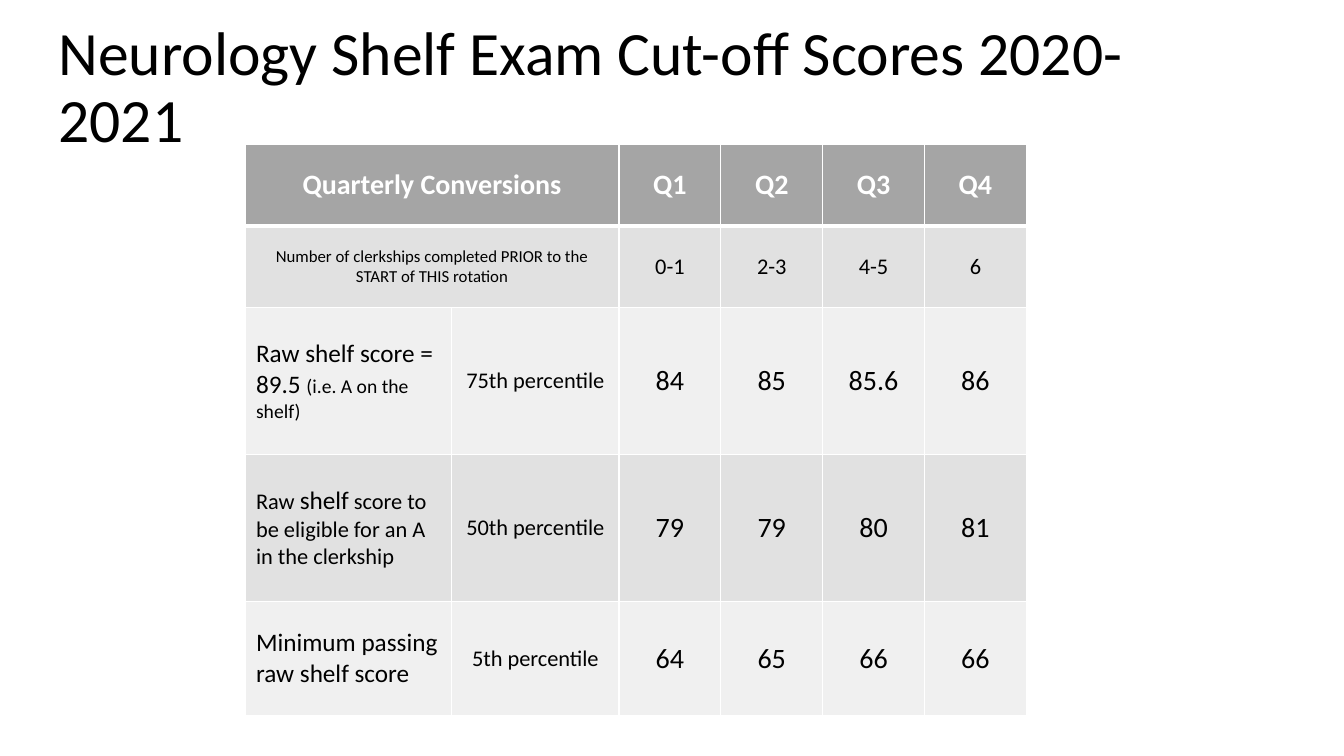
from dataclasses import dataclass

from lxml import etree
from pptx import Presentation
from pptx.dml.color import RGBColor
from pptx.enum.text import MSO_ANCHOR, MSO_AUTO_SIZE, PP_ALIGN
from pptx.oxml.ns import qn
from pptx.util import Inches, Pt

MIDDLE = MSO_ANCHOR.MIDDLE
LEFT, CENTER = PP_ALIGN.LEFT, PP_ALIGN.CENTER
NO_AUTOFIT = MSO_AUTO_SIZE.NONE


@dataclass(frozen=True)
class Theme:
    font: str = "Calibri"
    text: str = "000000"
    white: str = "FFFFFF"
    header: str = "A5A5A5"
    bands: tuple = ("F0F0F0", "E1E1E1")
    title_size: int = 44
    large: int = 20
    medium: int = 18
    normal: int = 16
    small: int = 14
    note: int = 12
    thin_line: int = 1
    header_line: int = 3


THEME = Theme()

COLUMN_WIDTHS = (2.05, 1.66, 1.01, 1.01, 1.01, 1.01)
ROW_HEIGHTS = (0.81, 0.81, 1.46, 1.46, 1.13)

# Rows with a label across the first two columns: label, label size, values, value size
SPANNING_ROWS = [
    ("Quarterly Conversions", THEME.large, ("Q1", "Q2", "Q3", "Q4"), THEME.large),
    ("Number of clerkships completed PRIOR to the START of THIS rotation",
     THEME.note, ("0-1", "2-3", "4-5", "6"), THEME.normal),
]

# Score rows: label runs with sizes, percentile, quarterly scores
SCORE_ROWS = [
    ([("Raw shelf score = 89.5 ", THEME.medium), ("(i.e. A on the shelf)", THEME.small)],
     "75th percentile", ("84", "85", "85.6", "86")),
    ([("Raw ", THEME.normal), ("shelf", THEME.medium),
      (" score to be eligible for an A in the clerkship", THEME.normal)],
     "50th percentile", ("79", "79", "80", "81")),
    ([("Minimum passing raw shelf score", THEME.medium)],
     "5th percentile", ("64", "65", "66", "66")),
]


def write_runs(paragraph, runs, color, bold=False):
    for text, size in runs:
        run = paragraph.add_run()
        run.text = text
        run.font.name = THEME.font
        run.font.size = Pt(size)
        run.font.bold = bold
        run.font.color.rgb = RGBColor.from_string(color)


def set_borders(cell, top, bottom):
    properties = cell._tc.get_or_add_tcPr()
    widths = {"a:lnL": THEME.thin_line, "a:lnR": THEME.thin_line,
              "a:lnT": top, "a:lnB": bottom}
    for position, (tag, width) in enumerate(widths.items()):
        line = etree.Element(qn(tag), w=str(Pt(width)))
        fill = etree.SubElement(line, qn("a:solidFill"))
        etree.SubElement(fill, qn("a:srgbClr"), val=THEME.white)
        properties.insert(position, line)


def style_cell(cell, row):
    cell.fill.solid()
    color = THEME.bands[row % 2] if row else THEME.header
    cell.fill.fore_color.rgb = RGBColor.from_string(color)
    cell.vertical_anchor = MIDDLE
    cell.margin_left = cell.margin_right = Inches(0.11)
    cell.margin_top = cell.margin_bottom = Inches(0.06)
    set_borders(cell,
                THEME.header_line if row == 1 else THEME.thin_line,
                THEME.header_line if row == 0 else THEME.thin_line)


def write_cell(cell, row, runs, alignment=CENTER):
    paragraph = cell.text_frame.paragraphs[0]
    paragraph.alignment = alignment
    write_runs(paragraph, runs, THEME.text if row else THEME.white, bold=row == 0)


def add_title(slide, left, top, width, height):
    title = slide.shapes.title
    title.left, title.top = Inches(left), Inches(top)
    title.width, title.height = Inches(width), Inches(height)
    frame = title.text_frame
    frame.word_wrap = True
    frame.auto_size = NO_AUTOFIT
    frame.vertical_anchor = MIDDLE
    paragraph = frame.paragraphs[0]
    paragraph.alignment = LEFT
    paragraph.line_spacing = 0.9
    write_runs(paragraph, [("Neurology Shelf Exam Cut-off Scores 2020-2021", THEME.title_size)],
               THEME.text)


def add_score_table(slide, left, top, width, height):
    table = slide.shapes.add_table(len(ROW_HEIGHTS), len(COLUMN_WIDTHS), Inches(left),
                                   Inches(top), Inches(width), Inches(height)).table
    # Grid, scaled to the box
    for column, share in zip(table.columns, COLUMN_WIDTHS):
        column.width = Inches(width * share / sum(COLUMN_WIDTHS))
    for row, share in zip(table.rows, ROW_HEIGHTS):
        row.height = Inches(height * share / sum(ROW_HEIGHTS))
    for row in range(len(ROW_HEIGHTS)):
        for column in range(len(COLUMN_WIDTHS)):
            style_cell(table.cell(row, column), row)

    # Header and clerkship rows
    for row, (label, label_size, values, value_size) in enumerate(SPANNING_ROWS):
        table.cell(row, 0).merge(table.cell(row, 1))
        write_cell(table.cell(row, 0), row, [(label, label_size)])
        for column, value in enumerate(values, start=2):
            write_cell(table.cell(row, column), row, [(value, value_size)])

    # Score rows
    for row, (label_runs, percentile, scores) in enumerate(SCORE_ROWS, len(SPANNING_ROWS)):
        write_cell(table.cell(row, 0), row, label_runs, LEFT)
        write_cell(table.cell(row, 1), row, [(percentile, THEME.normal)])
        for column, score in enumerate(scores, start=2):
            write_cell(table.cell(row, column), row, [(score, THEME.large)])


def main():
    presentation = Presentation()
    presentation.slide_width = Inches(13.33)
    presentation.slide_height = Inches(7.5)
    slide = presentation.slides.add_slide(presentation.slide_layouts[5])
    add_title(slide, 0.48, 0.16, 11.94, 1.45)
    add_score_table(slide, 2.43, 1.43, 7.75, 5.67)
    presentation.save("out.pptx")


if __name__ == "__main__":
    main()
